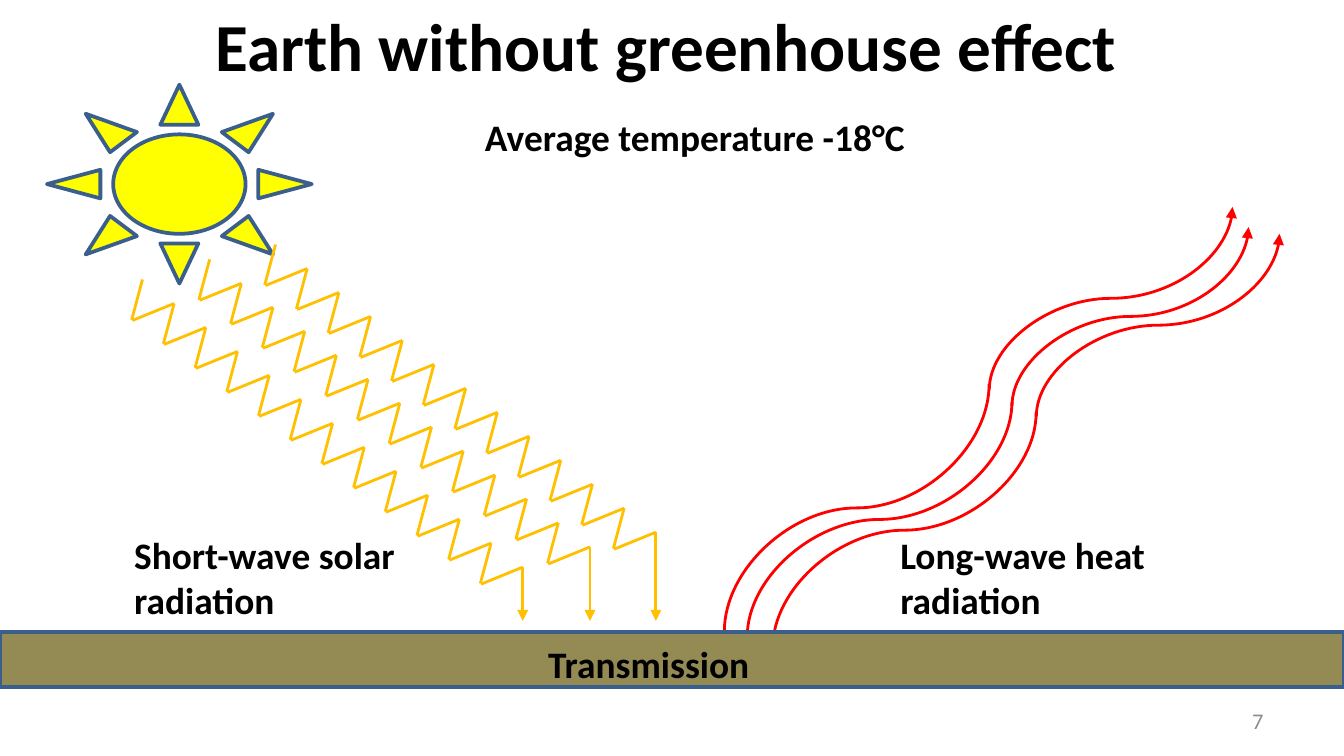
from lxml import etree
from pptx import Presentation
from pptx.dml.color import RGBColor
from pptx.enum.shapes import MSO_CONNECTOR, MSO_SHAPE
from pptx.enum.text import MSO_ANCHOR, MSO_AUTO_SIZE, PP_ALIGN
from pptx.oxml.ns import qn
from pptx.util import Inches, Pt

STRAIGHT, CURVE = MSO_CONNECTOR.STRAIGHT, MSO_CONNECTOR.CURVE
SUN, RECTANGLE = MSO_SHAPE.SUN, MSO_SHAPE.RECTANGLE
TOP, MIDDLE = MSO_ANCHOR.TOP, MSO_ANCHOR.MIDDLE
LEFT, CENTER, RIGHT = PP_ALIGN.LEFT, PP_ALIGN.CENTER, PP_ALIGN.RIGHT
FIT_SHAPE = MSO_AUTO_SIZE.SHAPE_TO_FIT_TEXT

BLACK = RGBColor(0x00, 0x00, 0x00)
GRAY = RGBColor(0x8C, 0x8C, 0x8C)
YELLOW = RGBColor(0xFF, 0xFF, 0x00)
AMBER = RGBColor(0xFF, 0xC0, 0x00)
RED = RGBColor(0xFF, 0x00, 0x00)
SOIL = RGBColor(0x94, 0x8A, 0x54)
OUTLINE = RGBColor(0x3A, 0x5F, 0x8C)

FONT = "Calibri"
WIDTH, HEIGHT = Inches(10), Inches(5.625)
COLUMNS = 100
CELL = WIDTH / COLUMNS
QUARTER_TURN = 90 * 60000

ZIGZAGS = 12
RAY_RUN, RAY_DROP = 28.3, 21.4
RAY_STARTS = [(10.6, 20.8), (15.6, 19.3), (20.5, 18.2)]
RAY_END = 46.2

HEAT_WAVES = [
    [((53.9, 47), (73.6, 28.6)), ((73.6, 29), (91.7, 15.4))],
    [((55.6, 47.4), (75.3, 29.9)), ((75.3, 30.2), (92.9, 16.9))],
    [((57.5, 48.2), (77.1, 30.7)), ((77.1, 31), (95.2, 17.4))],
]

LABELS = [
    ("Transmission", (39.8, 47.2, 17.6, 4.4)),
    ("Average temperature -18°C", (35.1, 8, 35.4, 4.4)),
    ("Short-wave solar radiation", (9, 39.1, 23.8, 7.7)),
    ("Long-wave heat radiation", (66, 39.1, 23.8, 7.7)),
]


def cells(*counts):
    return [round(CELL * count) for count in counts]


def write(frame, text, size, color, bold=True, align=LEFT, anchor=TOP):
    frame.word_wrap = True
    frame.vertical_anchor = anchor
    paragraph = frame.paragraphs[0]
    paragraph.alignment = align
    run = paragraph.add_run()
    run.text = text
    run.font.name = FONT
    run.font.size = Pt(size)
    run.font.bold = bold
    run.font.color.rgb = color


def add_title(slide, text, box):
    title = slide.shapes.title
    title.left, title.top, title.width, title.height = cells(*box)
    write(title.text_frame, text, 36, BLACK, align=CENTER, anchor=MIDDLE)


def add_label(slide, text, box):
    frame = slide.shapes.add_textbox(*cells(*box)).text_frame
    write(frame, text, 20, BLACK)
    frame.auto_size = FIT_SHAPE


def add_page_number(slide, number, box):
    frame = slide.shapes.add_textbox(*cells(*box)).text_frame
    write(frame, number, 12, GRAY, bold=False, align=RIGHT, anchor=MIDDLE)


def add_body(slide, preset, box, fill):
    body = slide.shapes.add_shape(preset, *cells(*box))
    body.shadow.inherit = False
    body.fill.solid()
    body.fill.fore_color.rgb = fill
    body.line.color.rgb = OUTLINE
    body.line.width = Pt(2)


def add_stroke(slide, kind, start, end, color, arrow=False):
    stroke = slide.shapes.add_connector(kind, *cells(*start, *end))
    stroke.line.color.rgb = color
    stroke.line.width = Pt(1.5)
    if arrow:
        outline = stroke.line._get_or_add_ln()
        etree.SubElement(outline, qn("a:tailEnd"), type="triangle")
    etree.SubElement(stroke._element.spPr, qn("a:effectLst"))
    return stroke


def add_solar_ray(slide, start):
    left, top = start
    step_x, step_y = RAY_RUN / ZIGZAGS, RAY_DROP / ZIGZAGS
    for index in range(ZIGZAGS):
        x, y = left + index * step_x, top + index * step_y
        add_stroke(slide, STRAIGHT, (x, y), (x - 0.8, y + 3), AMBER)
        add_stroke(slide, STRAIGHT, (x - 0.75, y + 3.05),
                   (x + step_x, y + step_y), AMBER)
    tip = left + RAY_RUN
    add_stroke(slide, STRAIGHT, (tip, top + RAY_DROP), (tip, RAY_END),
               AMBER, arrow=True)


def add_rising_curve(slide, start, end, arrow):
    center_x, center_y = (start[0] + end[0]) / 2, (start[1] + end[1]) / 2
    half_run, half_rise = (end[0] - start[0]) / 2, (start[1] - end[1]) / 2
    curve = add_stroke(slide, CURVE,
                       (center_x + half_rise, center_y + half_run),
                       (center_x - half_rise, center_y - half_run),
                       RED, arrow)
    curve._element.spPr.xfrm.set("rot", str(QUARTER_TURN))


def add_heat_wave(slide, lower, upper):
    add_rising_curve(slide, *lower, arrow=False)
    add_rising_curve(slide, *upper, arrow=True)


def main():
    deck = Presentation()
    deck.slide_width, deck.slide_height = WIDTH, HEIGHT
    slide = deck.slides.add_slide(deck.slide_layouts[5])

    add_title(slide, "Earth without greenhouse effect", (2, -1.4, 95.1, 9.4))
    add_body(slide, SUN, (3.5, 6.3, 19.7, 14.8), YELLOW)
    for start in RAY_STARTS:
        add_solar_ray(slide, start)
    for lower, upper in HEAT_WAVES:
        add_heat_wave(slide, lower, upper)
    add_body(slide, RECTANGLE, (0, 47, COLUMNS, 4.1), SOIL)
    for text, box in LABELS:
        add_label(slide, text, box)
    add_page_number(slide, "7", (71.7, 52.1, 23.3, 3))

    deck.save("out.pptx")


if __name__ == "__main__":
    main()
